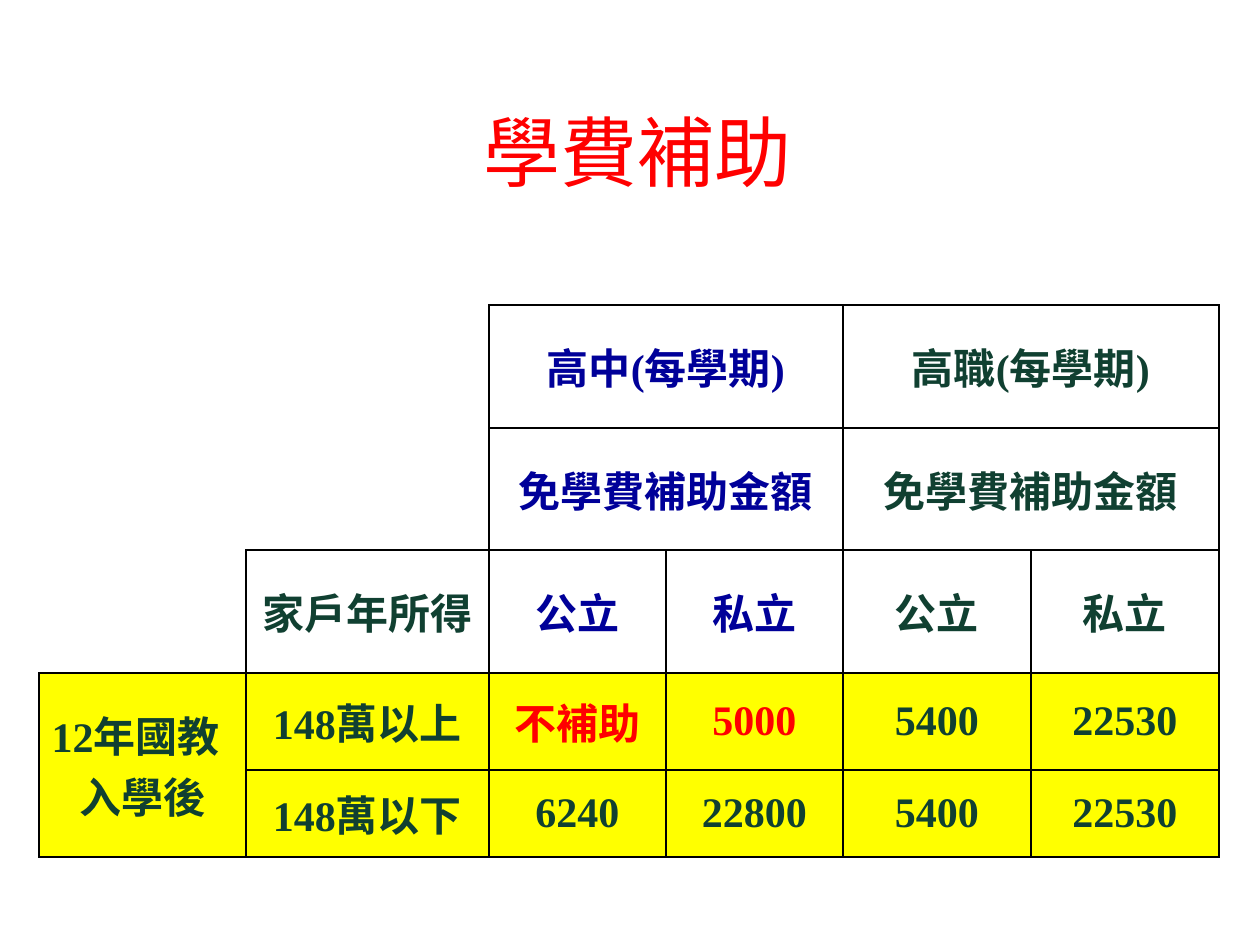
from lxml import etree
from pptx import Presentation
from pptx import util as u
from pptx.dml.color import RGBColor
from pptx.enum import text
from pptx.oxml import ns

PX = u.Inches(1) / 126
RED = RGBColor(0xFF, 0x00, 0x00)
BLUE = RGBColor(0x00, 0x00, 0x99)
GREEN = RGBColor(0x10, 0x40, 0x31)
YELLOW = RGBColor(0xFF, 0xFF, 0x00)
BLACK = RGBColor(0x00, 0x00, 0x00)
LATIN_FONT = "Times New Roman"
CJK_FONT = "Noto Sans CJK SC"

COLUMNS = [207, 243, 177, 177, 188, 188]
ROWS = [123, 122, 123, 97, 87]
CELLS = [
    ["", "", "高中(每學期)", "", "高職(每學期)", ""],
    ["", "", "免學費補助金額", "", "免學費補助金額", ""],
    ["", "家戶年所得", "公立", "私立", "公立", "私立"],
    ["12年國教\n入學後", "148萬以上", "不補助", "5000", "5400", "22530"],
    ["", "148萬以下", "6240", "22800", "5400", "22530"],
]
MERGES = [((0, 2), (0, 3)), ((0, 4), (0, 5)), ((1, 2), (1, 3)),
          ((1, 4), (1, 5)), ((3, 0), (4, 0))]
OPEN_CELLS = {(0, 0), (0, 1), (1, 0), (1, 1), (2, 0)}
FIRST_FILLED_ROW = 3
EDGES = {"a:lnL": (0, -1), "a:lnR": (0, 1), "a:lnT": (-1, 0), "a:lnB": (1, 0)}


def px(length):
    return u.Emu(round(length * PX))


def add_child(parent, tag, **attributes):
    return etree.SubElement(parent, ns.qn(tag), **attributes)


def add_span(para, words, size, color, latin, bold):
    span = para.add_run()
    span.text = words
    font = span.font
    font.size = u.Pt(size)
    font.bold = bold
    font.color.rgb = color
    font.name = latin
    add_child(font._element, "a:ea", typeface=CJK_FONT)
    return span


def add_text_shadow(span):
    properties = span.font._element
    effects = etree.Element(ns.qn("a:effectLst"))
    shadow = add_child(effects, "a:outerShdw", blurRad="38100", dist="38100",
                       dir="2700000", algn="tl")
    color = add_child(shadow, "a:srgbClr", val=str(BLACK))
    add_child(color, "a:alpha", val="43000")
    properties.find(ns.qn("a:solidFill")).addnext(effects)


def format_title(title):
    title.left, title.top = px(266), px(98)
    title.width, title.height = px(743), px(159)
    frame = title.text_frame
    frame.word_wrap = True
    frame.auto_size = text.MSO_AUTO_SIZE.NONE
    frame.vertical_anchor = text.MSO_ANCHOR.TOP
    para = frame.paragraphs[0]
    para.alignment = text.PP_ALIGN.CENTER
    add_text_shadow(add_span(para, "學費補助", 44, RED, CJK_FONT, False))


def is_drawn(row, column):
    inside = 0 <= row < len(ROWS) and 0 <= column < len(COLUMNS)
    return inside and (row, column) not in OPEN_CELLS


def add_borders(cell, row, column):
    properties = cell._tc.get_or_add_tcPr()
    for tag, (down, right) in EDGES.items():
        line = add_child(properties, tag, w=str(u.Pt(1)))
        if is_drawn(row, column) or is_drawn(row + down, column + right):
            fill = add_child(line, "a:solidFill")
            add_child(fill, "a:srgbClr", val=str(BLACK))
        else:
            add_child(line, "a:noFill")


def text_color(row, column):
    if row < FIRST_FILLED_ROW:
        return BLUE if column in (2, 3) else GREEN
    return RED if row == FIRST_FILLED_ROW and column in (2, 3) else GREEN


def format_cell(cell, row, column, words):
    add_borders(cell, row, column)
    if row >= FIRST_FILLED_ROW:
        cell.fill.solid()
        cell.fill.fore_color.rgb = YELLOW
    else:
        cell.fill.background()
    cell.vertical_anchor = text.MSO_ANCHOR.MIDDLE
    if not words:
        return
    frame = cell.text_frame
    for index, line in enumerate(words.split("\n")):
        para = frame.add_paragraph() if index else frame.paragraphs[0]
        left = "\n" in words and index == 0
        para.alignment = text.PP_ALIGN.LEFT if left else text.PP_ALIGN.CENTER
        add_span(para, line, 24, text_color(row, column), LATIN_FONT, True)


def add_subsidy_table(page):
    frame = page.shapes.add_table(len(ROWS), len(COLUMNS), px(39), px(305),
                                  px(sum(COLUMNS)), px(sum(ROWS)))
    table = frame.table
    table.first_row = False
    table.horz_banding = False
    for column, width in zip(table.columns, COLUMNS):
        column.width = px(width)
    for row, height in zip(table.rows, ROWS):
        row.height = px(height)
    for start, end in MERGES:
        table.cell(*start).merge(table.cell(*end))
    for row, line in enumerate(CELLS):
        for column, words in enumerate(line):
            format_cell(table.cell(row, column), row, column, words)


def main():
    deck = Presentation()
    deck.slide_width, deck.slide_height = px(1260), px(945)
    page = deck.slides.add_slide(deck.slide_layouts[5])
    add_subsidy_table(page)
    format_title(page.shapes.title)
    deck.save("out.pptx")


if __name__ == "__main__":
    main()
